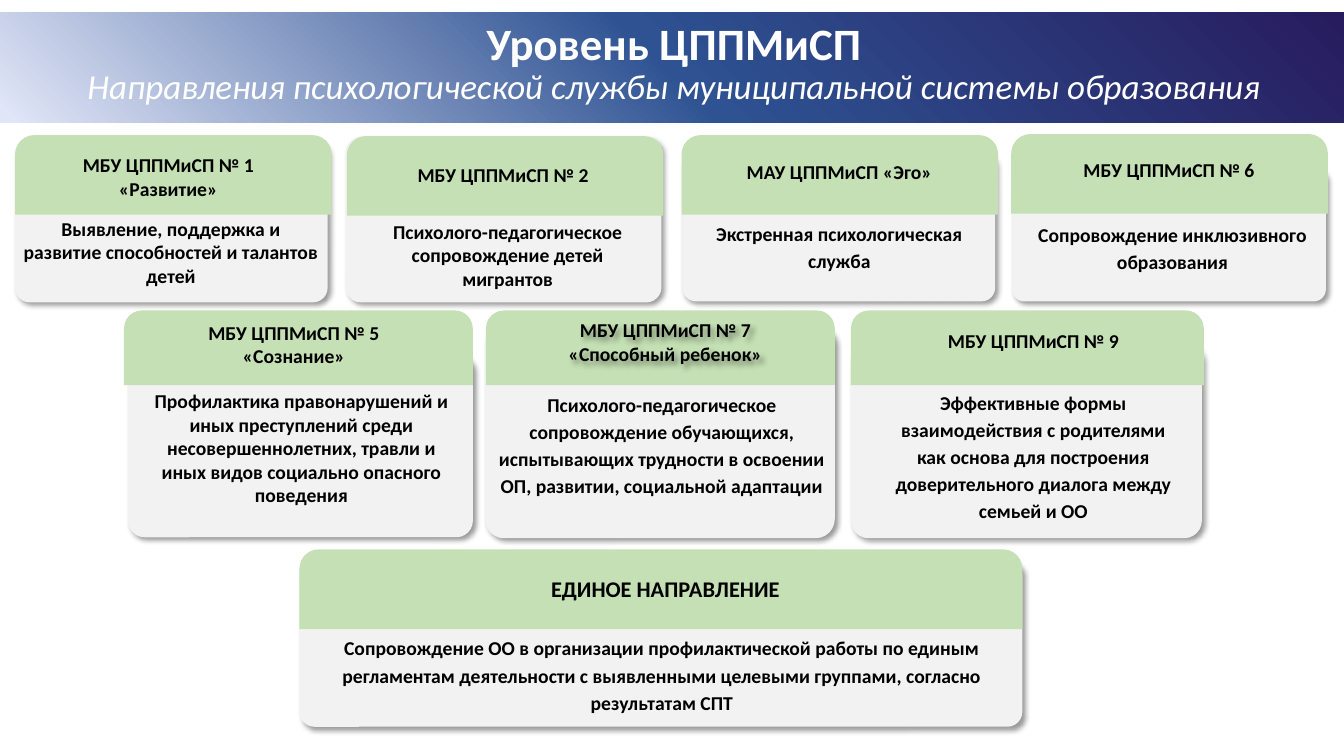
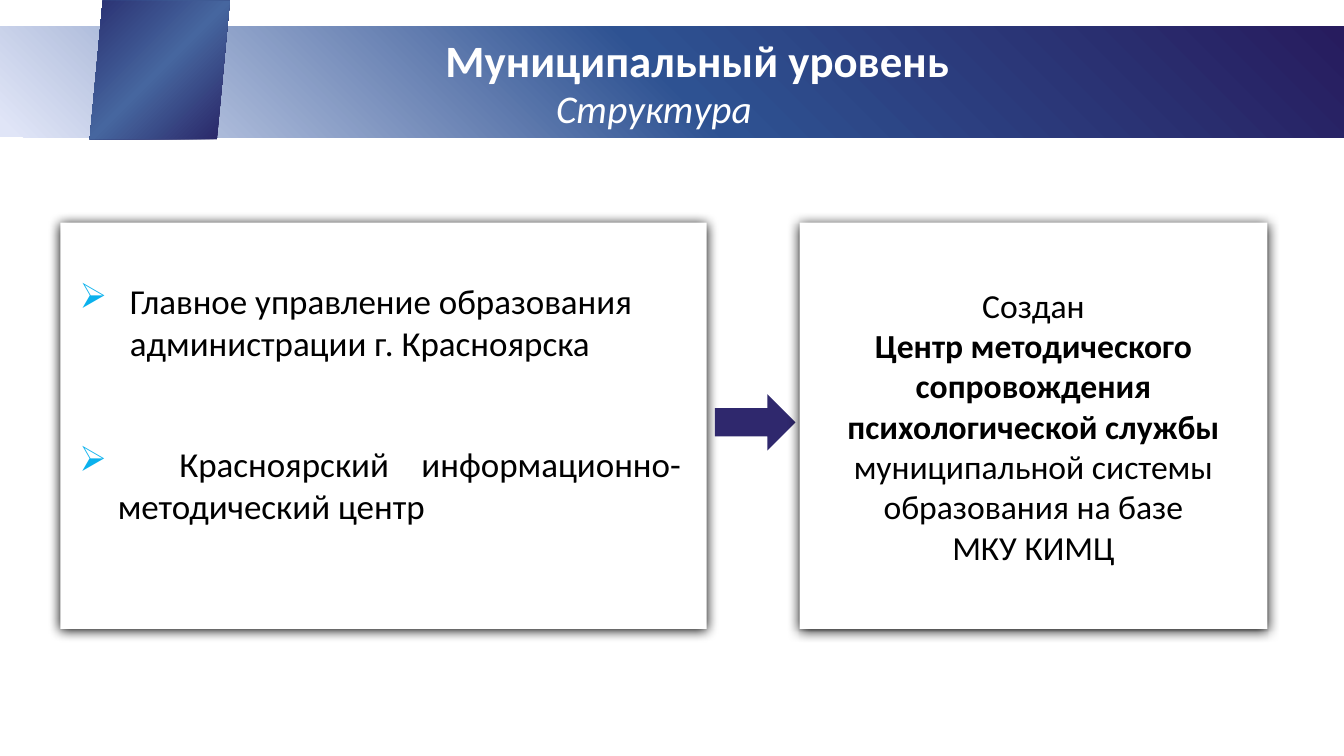
from lxml import etree
from pptx import Presentation
from pptx.dml.color import RGBColor
from pptx.enum.shapes import MSO_SHAPE as Shape
from pptx.enum.text import MSO_ANCHOR as Anchor, PP_ALIGN as Align
from pptx.oxml import parse_xml
from pptx.oxml.ns import nsdecls, qn
from pptx.util import Inches, Pt

COLORS = {
    "black": "000000", "white": "FFFFFF", "card": "F2F2F2", "head": "C5E0B4",
    "arrow": "2F286D", "bullet": "0AB1ED",
}
BAND_STOPS = [(0, "271C5E"), (50, "2E5292"), (99, "E0E5F7")]
BADGE_STOPS = [(0, "282364"), (50, "46669F"), (100, "2A3071")]
CORNER_GLOW = '<a:path path="circle"><a:fillToRect l="100000" b="100000"/></a:path>'
DIAGONAL = '<a:lin ang="2700000" scaled="1"/>'
# Shadows: opacity in percent, blur and distance in points, direction in degrees
CARD_SHADOW = (40, 4, 3, 45)
PANEL_SHADOW = (100, 8.5, 1, 90)

# The grid has 75 rows; its cells are square, so columns have the same size
ROWS = 75
SLIDE_COLUMNS = 133.33


class Deck:
    """Holds the style, the presentation and the current slide."""

    font = "Calibri"

    def __init__(self):
        self.presentation = Presentation()
        self.presentation.slide_width = Inches(13.33)
        self.presentation.slide_height = Inches(7.5)
        self.slide = None

    def new_slide(self):
        layout = self.presentation.slide_layouts[6]
        self.slide = self.presentation.slides.add_slide(layout)

    def cells(self, *lengths):
        cell = self.presentation.slide_height / ROWS
        return [round(length * cell) for length in lengths]

    def shape(self, kind, box, fill=None, adjustments=(), shadow=None):
        shape = self.slide.shapes.add_shape(kind, *self.cells(*box))
        shape.shadow.inherit = False
        shape.line.fill.background()
        if fill:
            shape.fill.solid()
            shape.fill.fore_color.rgb = RGBColor.from_string(COLORS[fill])
        else:
            shape.fill.background()
        for index, value in enumerate(adjustments):
            shape.adjustments[index] = value
        if shadow:
            self.cast_shadow(shape, shadow)
        return shape

    def cast_shadow(self, shape, shadow):
        opacity, blur, distance, direction = shadow
        shape.shadow.inherit = False
        effects = shape._element.spPr.find(qn("a:effectLst"))
        effects.append(parse_xml(
            f'<a:outerShdw {nsdecls("a")} blurRad="{Pt(blur)}" dist="{Pt(distance)}" '
            f'dir="{direction * 60000}" algn="ctr" rotWithShape="0">'
            f'<a:srgbClr val="{COLORS["black"]}"><a:alpha val="{opacity * 1000}"/>'
            '</a:srgbClr></a:outerShdw>'))

    def gradient_shape(self, kind, box, stops, direction, adjustments=()):
        shape = self.shape(kind, box, adjustments=adjustments)
        stop_xml = "".join(
            f'<a:gs pos="{place * 1000}"><a:srgbClr val="{color}"/></a:gs>'
            for place, color in stops)
        gradient = parse_xml(
            f'<a:gradFill {nsdecls("a")} rotWithShape="1">'
            f'<a:gsLst>{stop_xml}</a:gsLst>{direction}</a:gradFill>')
        properties = shape._element.spPr
        properties.replace(properties.find(qn("a:noFill")), gradient)
        shape.rotation = 180
        return shape

    def band(self, top):
        self.gradient_shape(Shape.RECTANGLE, (0, top, SLIDE_COLUMNS, 11),
                            BAND_STOPS, CORNER_GLOW)

    def style(self, paragraph, size, color="black", bold=None, italic=None,
              align=Align.CENTER, spacing=None):
        paragraph.alignment = align
        if spacing:
            paragraph.line_spacing = spacing
        font = paragraph.font
        font.name, font.size = self.font, Pt(size)
        font.bold, font.italic = bold, italic
        font.color.rgb = RGBColor.from_string(COLORS[color])

    def text(self, box, words, size, anchor=Anchor.TOP, bullet=None, tab=None, **look):
        text_box = self.slide.shapes.add_textbox(*self.cells(*box))
        frame = text_box.text_frame
        frame.word_wrap = True
        frame.vertical_anchor = anchor
        paragraph = frame.paragraphs[0]
        paragraph.text = words
        if bullet:
            self.add_bullet(paragraph, bullet, tab)
        self.style(paragraph, size, **look)
        return text_box

    def add_bullet(self, paragraph, indent, tab):
        properties = paragraph._p.get_or_add_pPr()
        margin, = self.cells(indent)
        properties.set("marL", str(margin))
        properties.set("indent", str(-margin))
        color = etree.SubElement(properties, qn("a:buClr"))
        etree.SubElement(color, qn("a:srgbClr"), val=COLORS["bullet"])
        etree.SubElement(properties, qn("a:buChar"), char="➢")
        if tab:
            tabs = etree.SubElement(properties, qn("a:tabLst"))
            etree.SubElement(tabs, qn("a:tab"), pos=str(self.cells(tab)[0]), algn="l")

    def panel(self, box):
        return self.shape(Shape.RECTANGLE, box, "white", shadow=PANEL_SHADOW)

    def card(self, head, body, title, words, title_size=14, glow=False):
        """Each part starts with its box; title and words end with their text."""
        self.shape(Shape.ROUNDED_RECTANGLE, body, "card", [0.09], CARD_SHADOW)
        self.shape(Shape.ROUND_2_SAME_RECTANGLE, head, "head", [0.241, 0])
        *title_box, title_text = title
        heading = self.text((*title_box, 4), title_text, title_size, bold=True)
        if glow:
            self.cast_shadow(heading, CARD_SHADOW)
        *words_box, spacing, words_text = words
        self.text((*words_box, 9), words_text, 14, bold=True, spacing=spacing)


def build_directions(deck):
    deck.new_slide()
    # Heading
    deck.band(1.2)
    deck.text((1.7, 4, 130.2, 9.5),
              "Направления психологической службы муниципальной системы образования",
              25, Anchor.MIDDLE, color="white", italic=True, spacing=0.9)
    deck.text((33.4, 1.1, 66.9, 6.4), "Уровень ЦППМиСП", 32, color="white", bold=True)

    # First row of centres
    deck.card((1.5, 13.4, 31.4, 7.9), (1.5, 13.9, 31, 16.1),
              (2.1, 14.7, 29.2, "МБУ ЦППМиСП № 1\v«Развитие»"),
              (1.2, 21, 31.5, None,
               "Выявление, поддержка и развитие способностей и талантов детей"))
    deck.card((34.4, 13.5, 31.4, 7.9), (34.3, 13.6, 31.3, 16.4),
              (35.1, 15.7, 29.6, "МБУ ЦППМиСП № 2"),
              (35.6, 21.3, 29.5, None,
               "Психолого-педагогическое сопровождение детей мигрантов"))
    deck.card((67.6, 13.4, 31.4, 7.9), (67.7, 15.1, 31, 14.8),
              (69.2, 15.4, 28.1, "МАУ ЦППМиСП «Эго»"),
              (67.6, 21.2, 31.3, 1.15, "Экстренная психологическая\vслужба"))
    deck.card((100.3, 13.3, 31.4, 7.9), (100.4, 16.7, 31.1, 13.2),
              (103.1, 15.2, 25.7, "МБУ ЦППМиСП № 6"),
              (100.8, 21.3, 31, 1.15, "Сопровождение инклюзивного образования"))

    # Second row of centres
    deck.card((12.3, 30.8, 34.6, 7.4), (12.7, 35.1, 34.2, 18.2),
              (13.2, 31.3, 31.9, "МБУ ЦППМиСП № 5\v«Сознание»"),
              (13.2, 38.1, 33.4, None,
               "Профилактика правонарушений и иных преступлений среди "
               "несовершеннолетних, травли и иных видов социально опасного поведения"))
    deck.card((48.2, 30.8, 34.6, 7.4), (48.1, 32.3, 34.7, 21.1),
              (51.7, 31.1, 28.6, "МБУ ЦППМиСП № 7\v«Способный ребенок»"),
              (48.5, 38.1, 34.3, 1.15,
               "Психолого-педагогическое сопровождение обучающихся, испытывающих "
               "трудности в освоении ОП, развитии, социальной адаптации"), glow=True)
    deck.card((84.4, 30.8, 35, 7.4), (84.4, 34.1, 34.8, 19.3),
              (89.7, 32.1, 25.6, "МБУ ЦППМиСП № 9"),
              (87, 37.9, 31, 1.15,
               "Эффективные формы взаимодействия с родителями как основа для "
               "построения доверительного диалога между семьей и ОО"))

    # Common direction
    deck.card((29.7, 54.5, 71.7, 7.9), (29.7, 55.6, 71.7, 16.5),
              (43.9, 56.6, 44.2, "ЕДИНОЕ НАПРАВЛЕНИЕ"),
              (29.8, 62.3, 71.7, 1.15,
               "Сопровождение ОО в организации профилактической работы по единым "
               "регламентам деятельности с выявленными целевыми группами, согласно "
               "результатам СПТ"), title_size=16)


def build_structure(deck):
    deck.new_slide()
    # Heading
    deck.band(2.6)
    deck.gradient_shape(Shape.PARALLELOGRAM, (8.9, 0.1, 13.9, 13.7),
                        BADGE_STOPS, DIAGONAL, [0.094])
    deck.text((11.7, 1.3, 115, 9.8), "Муниципальный уровень", 32, Anchor.MIDDLE,
              color="white", bold=True, spacing=0.9)
    deck.text((47.6, 7.9, 34.5, 5.7), "Структура", 28, color="white", italic=True)

    # Governing bodies
    deck.panel((6, 22.1, 64.1, 40.3))
    deck.text((6.9, 27.2, 62.8, 9.4),
              "Главное управление образования администрации г. Красноярска",
              25, bullet=5, align=Align.LEFT)
    deck.text((6.9, 43.4, 61.6, 9.4),
              "\tКрасноярский информационно-методический центр",
              25, bullet=3.8, tab=9.9, align=Align.JUSTIFY)

    # Resulting centre
    deck.shape(Shape.RIGHT_ARROW, (70.9, 39.1, 8, 5.6), "arrow")
    frame = deck.panel((79.3, 22.1, 46.4, 40.3)).text_frame
    frame.word_wrap = True
    frame.vertical_anchor = Anchor.MIDDLE
    created, centre = frame.paragraphs[0], frame.add_paragraph()
    created.text = "Создан"
    centre.text = "Центр методического сопровождения психологической службы "
    centre.runs[0].font.bold = True
    centre.add_run().text = "муниципальной системы образования на базе"
    centre.add_line_break()
    centre.add_run().text = "МКУ КИМЦ"
    for paragraph in (created, centre):
        deck.style(paragraph, 24)


def main():
    deck = Deck()
    build_directions(deck)
    build_structure(deck)
    deck.presentation.save("out.pptx")


if __name__ == "__main__":
    main()
